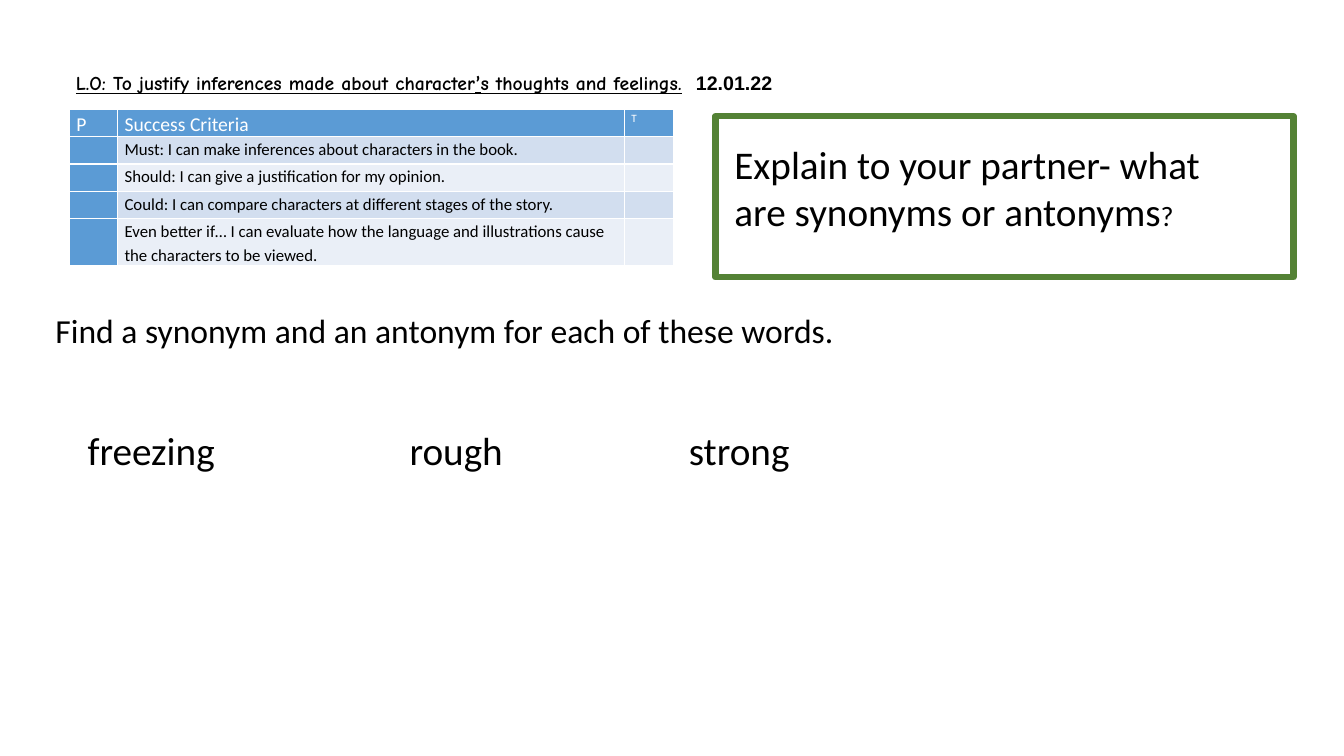
from dataclasses import dataclass

from lxml.etree import SubElement
from pptx import Presentation
from pptx.dml.color import RGBColor as RGB
from pptx.enum.shapes import MSO_SHAPE
from pptx.enum.text import MSO_ANCHOR, MSO_AUTO_SIZE, PP_ALIGN
from pptx.oxml.ns import qn
from pptx.util import Pt


@dataclass(frozen=True)
class Theme:
    black: RGB = RGB.from_string("000000")
    white: RGB = RGB.from_string("FFFFFF")
    blue: RGB = RGB.from_string("5B9BD5")
    bands: tuple = (RGB.from_string("D2DEEF"), RGB.from_string("EAEFF7"))
    green: RGB = RGB.from_string("548235")
    font: str = "Calibri"
    objective_font: str = "Comic Neue"
    date_font: str = "Arial"
    mark: int = 8
    criterion: int = 12
    heading: int = 14
    small: int = 20
    task: int = 24
    large: int = 28


T = Theme()


def add_run(p, text, size, color=T.black, font=T.font, bold=False, underline=False):
    r = p.add_run()
    r.text = text
    r.font.size = Pt(size)
    r.font.name = font
    r.font.bold = bold
    r.font.underline = underline
    r.font.color.rgb = color


def add_text(s, x, y, w, h, runs):
    """Add a wrapping text box from (text, size) runs and return its paragraph."""
    tf = s.shapes.add_textbox(Pt(x), Pt(y), Pt(w), Pt(h)).text_frame
    tf.word_wrap = True
    p = tf.paragraphs[0]
    for text, size in runs:
        add_run(p, text, size)
    return p


prs = Presentation()
prs.slide_width, prs.slide_height = Pt(960), Pt(540)
s = prs.slides.add_slide(prs.slide_layouts[5])

# Learning objective
title = s.shapes.title
title.left, title.top, title.width, title.height = Pt(47), Pt(47), Pt(594), Pt(24.5)
tf = title.text_frame
tf.word_wrap = True
tf.auto_size = MSO_AUTO_SIZE.NONE
tf.vertical_anchor = MSO_ANCHOR.MIDDLE
p = tf.paragraphs[0]
p.alignment = PP_ALIGN.LEFT
for text, font, underline in [
    ("L.O: To justify inferences made about character", T.objective_font, True),
    ("’", T.font, True),
    ("s thoughts and feelings.", T.objective_font, True),
    ("  ", T.objective_font, False),
    ("12.01.22", T.date_font, False),
]:
    add_run(p, text, T.heading, font=font, bold=True, underline=underline)

# Success criteria
criteria = [
    ("P", "Success Criteria", "T"),
    ("", "Must: I can make inferences about characters in the book.", ""),
    ("", "Should: I can give a justification for my opinion.", ""),
    ("", "Could: I can compare characters at different stages of the story.", ""),
    ("", "Even better if… I can evaluate how the language and illustrations "
         "cause the characters to be viewed.", ""),
]
widths = [34.5, 362, 35.5]
heights = [19.5] * 4 + [33.5]
table = s.shapes.add_table(len(criteria), len(widths), Pt(49.5), Pt(78),
                           Pt(sum(widths)), Pt(sum(heights))).table
for column, width in zip(table.columns, widths):
    column.width = Pt(width)
for i, (row, texts) in enumerate(zip(table.rows, criteria)):
    row.height = Pt(heights[i])
    for j, (cell, text) in enumerate(zip(row.cells, texts)):
        header = i == 0
        cell.fill.solid()
        cell.fill.fore_color.rgb = T.blue if header or j == 0 else T.bands[(i - 1) % 2]
        cell.margin_left = cell.margin_right = Pt(5)
        cell.margin_top = cell.margin_bottom = Pt(0)
        p = cell.text_frame.paragraphs[0]
        p.line_spacing = 1.15
        if header:
            add_run(p, text, T.mark if j == 2 else T.heading, T.white)
        elif text:
            add_run(p, text, T.criterion)
        else:
            SubElement(p._p, qn("a:endParaRPr"), sz=str(T.criterion * 100))
        if text and i in (1, 2):
            p.space_before = p.space_after = Pt(2)

# Partner question
frame = s.shapes.add_shape(MSO_SHAPE.RECTANGLE, Pt(511), Pt(83), Pt(413), Pt(115))
frame.shadow.inherit = False
frame.fill.background()
frame.line.color.rgb = T.green
frame.line.width = Pt(4.5)
add_text(s, 517.5, 96.5, 389, 75, [
    ("Explain to your partner- what are synonyms or antonyms", T.large),
    ("?", T.small),
])

# Word task
add_text(s, 32.5, 217.5, 580, 36,
         [("Find a synonym and an antonym for each of these words.", T.task)])
words = add_text(s, 55.5, 301, 816.5, 41, [("freezing\trough\tstrong", T.large)])
tabs = SubElement(words._p.get_or_add_pPr(), qn("a:tabLst"))
for stop in (230, 429.5):
    SubElement(tabs, qn("a:tab"), pos=str(Pt(stop)), algn="l")

prs.save("out.pptx")
